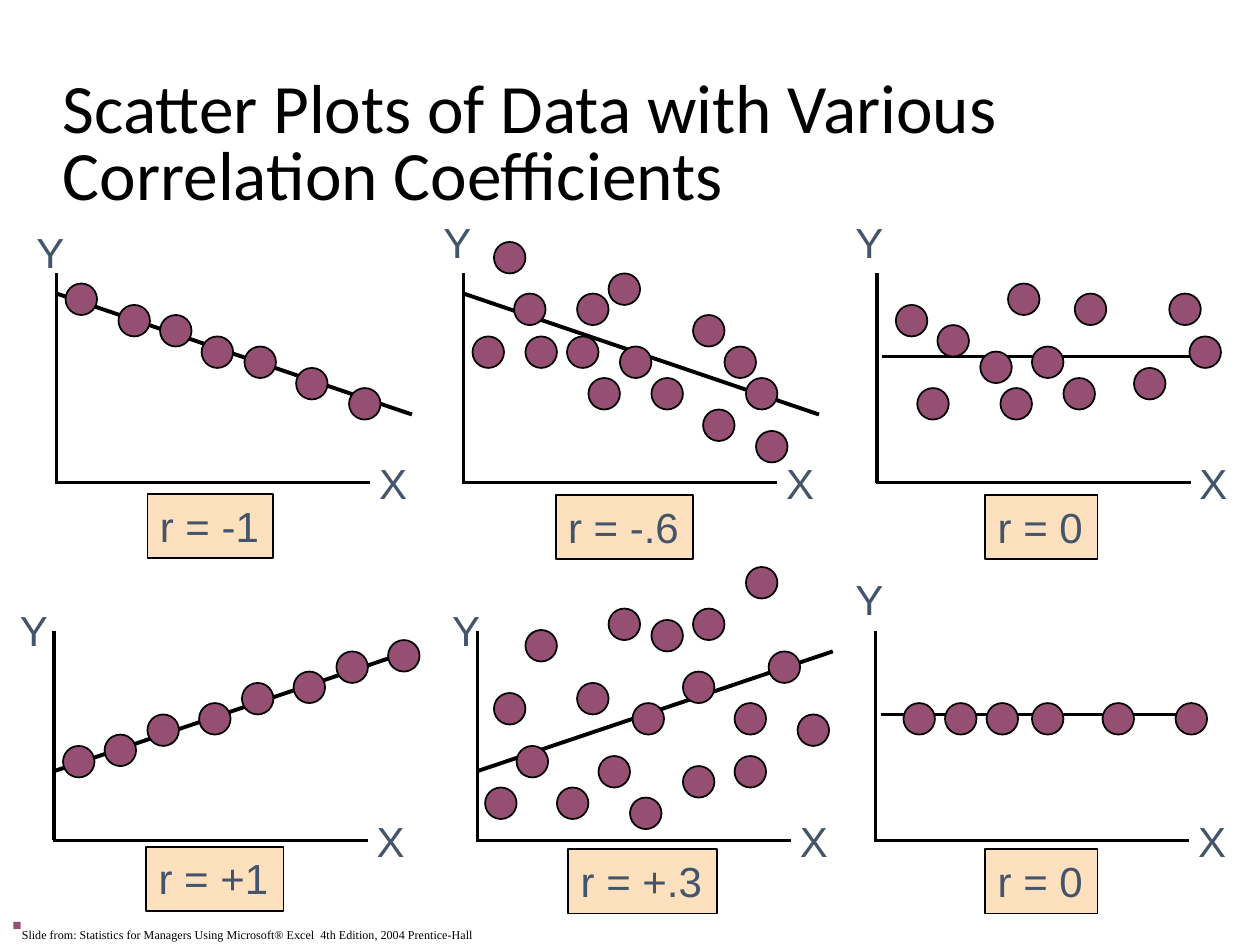
"""Build a slide of six scatter plots with various correlation coefficients."""
from lxml import etree
from pptx import Presentation
from pptx.dml.color import RGBColor
from pptx.enum.shapes import MSO_CONNECTOR, MSO_SHAPE
from pptx.enum.text import MSO_ANCHOR, MSO_AUTO_SIZE, PP_ALIGN
from pptx.oxml.ns import qn
from pptx.util import Inches, Pt

LINE, OVAL, RECT = MSO_CONNECTOR.STRAIGHT, MSO_SHAPE.OVAL, MSO_SHAPE.RECTANGLE
COLORS = {"black": "000000", "dot": "954F72", "label": "44546A", "box": "FDE0BD"}
TITLE = "Scatter Plots of Data with Various Correlation Coefficients"
SOURCE = ("Slide from: Statistics for Managers Using Microsoft® Excel  "
          "4th Edition, 2004 Prentice-Hall")

TRENDS = {
    "falling": (0, 0.16, 2.82, 1.12, 2.25),
    "rising": (0, 1.11, 2.82, 0.16, 2.25),
    "flat": (0.04, 0.66, 2.54, 0.66, 2),
}
AXIS_HEIGHT, AXIS_WIDTH, DOT, LABEL_W, LABEL_H = 1.66, 2.5, 0.25, 0.42, 0.5
TOP_ROW, BOTTOM_ROW = 2.17, 5.01

PLOTS = [
    {"origin": (0.45, TOP_ROW), "trend": "falling", "y_label": (0.19, 1.75),
     "r": ("r = -1", 1.17, 3.92, 1.0),
     "dots": [(0.52, 2.25), (0.94, 2.42), (1.27, 2.5), (1.6, 2.67), (1.94, 2.75),
              (2.35, 2.92), (2.77, 3.08)]},
    {"origin": (3.68, TOP_ROW), "trend": "falling", "y_label": (3.42, 1.67),
     "r": ("r = -.6", 4.41, 3.93, 1.09),
     "dots": [(6, 3.42), (5.92, 3), (3.92, 1.92), (4.08, 2.33), (5.58, 3.25),
              (3.75, 2.67), (5.17, 3), (4.58, 2.33), (4.83, 2.17), (5.75, 2.75),
              (4.17, 2.67), (5.5, 2.5), (4.5, 2.67), (4.92, 2.75), (4.67, 3)]},
    {"origin": (6.96, TOP_ROW), "trend": "flat", "y_label": (6.69, 1.67),
     "r": ("r = 0", 7.82, 3.93, 0.89),
     "dots": [(7.28, 3.08), (9.28, 2.33), (9.44, 2.67), (8.44, 3), (8.53, 2.33),
              (8, 2.25), (7.11, 2.42), (7.44, 2.58), (7.78, 2.79), (8.19, 2.75),
              (7.94, 3.08), (9, 2.92)]},
    {"origin": (0.43, BOTTOM_ROW), "trend": "rising", "y_label": (0.06, 4.75),
     "r": ("r = +1", 1.16, 6.72, 1.09),
     "dots": [(0.5, 5.92), (0.83, 5.83), (1.17, 5.67), (1.58, 5.58), (1.92, 5.42),
              (2.33, 5.33), (2.67, 5.17), (3.08, 5.08)]},
    {"origin": (3.79, BOTTOM_ROW), "trend": "rising", "y_label": (3.49, 4.75),
     "r": ("r = +.3", 4.51, 6.74, 1.18),
     "dots": [(3.85, 6.25), (4.1, 5.92), (5.92, 4.5), (6.1, 5.17), (4.42, 6.25),
              (6.33, 5.67), (5.42, 6.08), (5.5, 4.83), (4.83, 4.83), (3.92, 5.5),
              (4.17, 5), (4.58, 5.42), (5.83, 5.58), (5.02, 5.58), (5, 6.33),
              (5.83, 6), (5.42, 5.33), (4.75, 6), (5.17, 4.92)]},
    {"origin": (6.95, BOTTOM_ROW), "trend": "flat", "y_label": (6.69, 4.5),
     "r": ("r = 0", 7.82, 6.74, 0.89),
     "dots": [(x, 5.58) for x in (7.17, 7.5, 7.83, 8.19, 8.75, 9.33)]},
]


def rgb(name):
    return RGBColor.from_string(COLORS[name])


def add_line(s, x1, y1, x2, y2, width):
    line = s.shapes.add_connector(LINE, *map(Inches, (x1, y1, x2, y2)))
    line.line.color.rgb = rgb("black")
    line.line.width = Pt(width)
    etree.SubElement(line._element.spPr, qn("a:effectLst"))


def add_filled(s, kind, fill, *box):
    sp = s.shapes.add_shape(kind, *map(Inches, box))
    sp.shadow.inherit = False
    sp.fill.solid()
    sp.fill.fore_color.rgb = rgb(fill)
    sp.line.color.rgb = rgb("black")
    sp.line.width = Pt(1)
    return sp


def set_text(sp, text, font="Arial", size=24, color="label", wrap=False):
    tf = sp.text_frame
    tf.text = text
    tf.word_wrap = wrap
    tf.auto_size = MSO_AUTO_SIZE.NONE if wrap else MSO_AUTO_SIZE.SHAPE_TO_FIT_TEXT
    tf.vertical_anchor = MSO_ANCHOR.MIDDLE if wrap else MSO_ANCHOR.TOP
    p = tf.paragraphs[0]
    p.alignment = PP_ALIGN.LEFT
    r = p.runs[0]
    r.font.name, r.font.size = font, Pt(size)
    r.font.color.rgb = rgb(color)
    return p


def add_text(s, text, *box, **style):
    return set_text(s.shapes.add_textbox(*map(Inches, box)), text, **style)


def add_plot(s, plot):
    x, y = plot["origin"]
    x1, y1, x2, y2, width = TRENDS[plot["trend"]]
    base = y + AXIS_HEIGHT
    add_line(s, x + x1, y + y1, x + x2, y + y2, width)
    add_line(s, x, y, x, base, 2)
    add_line(s, x - 0.01, base, x - 0.01 + AXIS_WIDTH, base, 2)
    for left, top in plot["dots"]:
        add_filled(s, OVAL, "dot", left, top, DOT, DOT)
    add_text(s, "Y", *plot["y_label"], LABEL_W, LABEL_H)
    add_text(s, "X", x + 2.46, base - 0.25, LABEL_W, LABEL_H)
    text, left, top, width = plot["r"]
    set_text(add_filled(s, RECT, "box", left, top, width, 0.51), text)


def add_source(s):
    p = add_text(s, SOURCE, 0, 7.2, 6.48, 0.3,
                 font="Times New Roman", size=12, color="black")
    p.runs[0].font._element.set("baseline", "-25000")
    pPr = p._p.get_or_add_pPr()
    bullet_color = etree.SubElement(pPr, qn("a:buClr"))
    etree.SubElement(bullet_color, qn("a:srgbClr"), val=COLORS["dot"])
    etree.SubElement(pPr, qn("a:buSzPct"), val="60000")
    etree.SubElement(pPr, qn("a:buChar"), char="■")


def main():
    prs = Presentation()
    prs.slide_width, prs.slide_height = Inches(10), Inches(7.5)
    s = prs.slides.add_slide(prs.slide_layouts[6])
    title = add_text(s, TITLE, 0.4, 0.54, 9.19, 1.25,
                     font="Calibri", size=39.6, color="black", wrap=True)
    title.line_spacing = 0.8
    for plot in PLOTS:
        add_plot(s, plot)
    add_source(s)
    prs.save("out.pptx")


if __name__ == "__main__":
    main()
